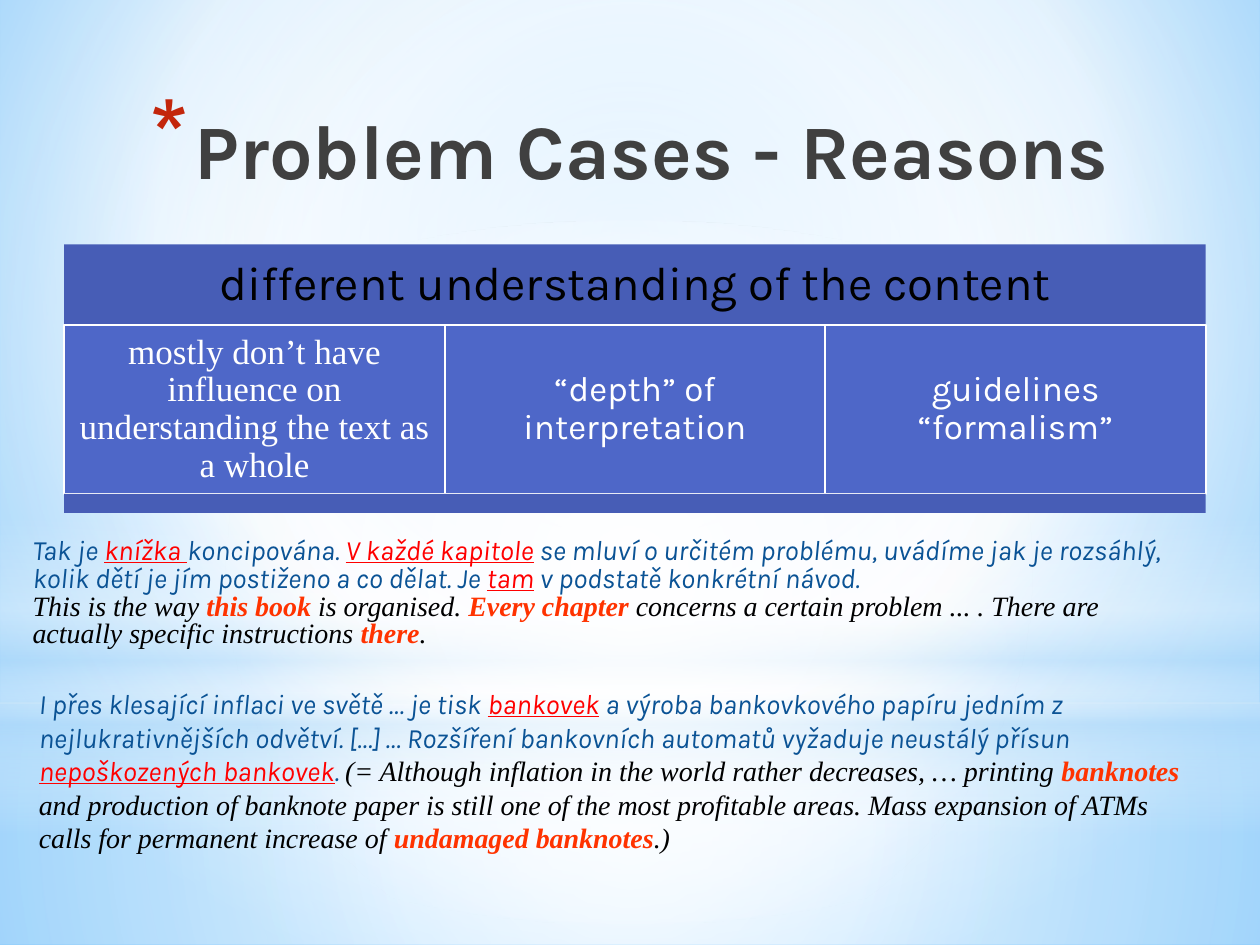
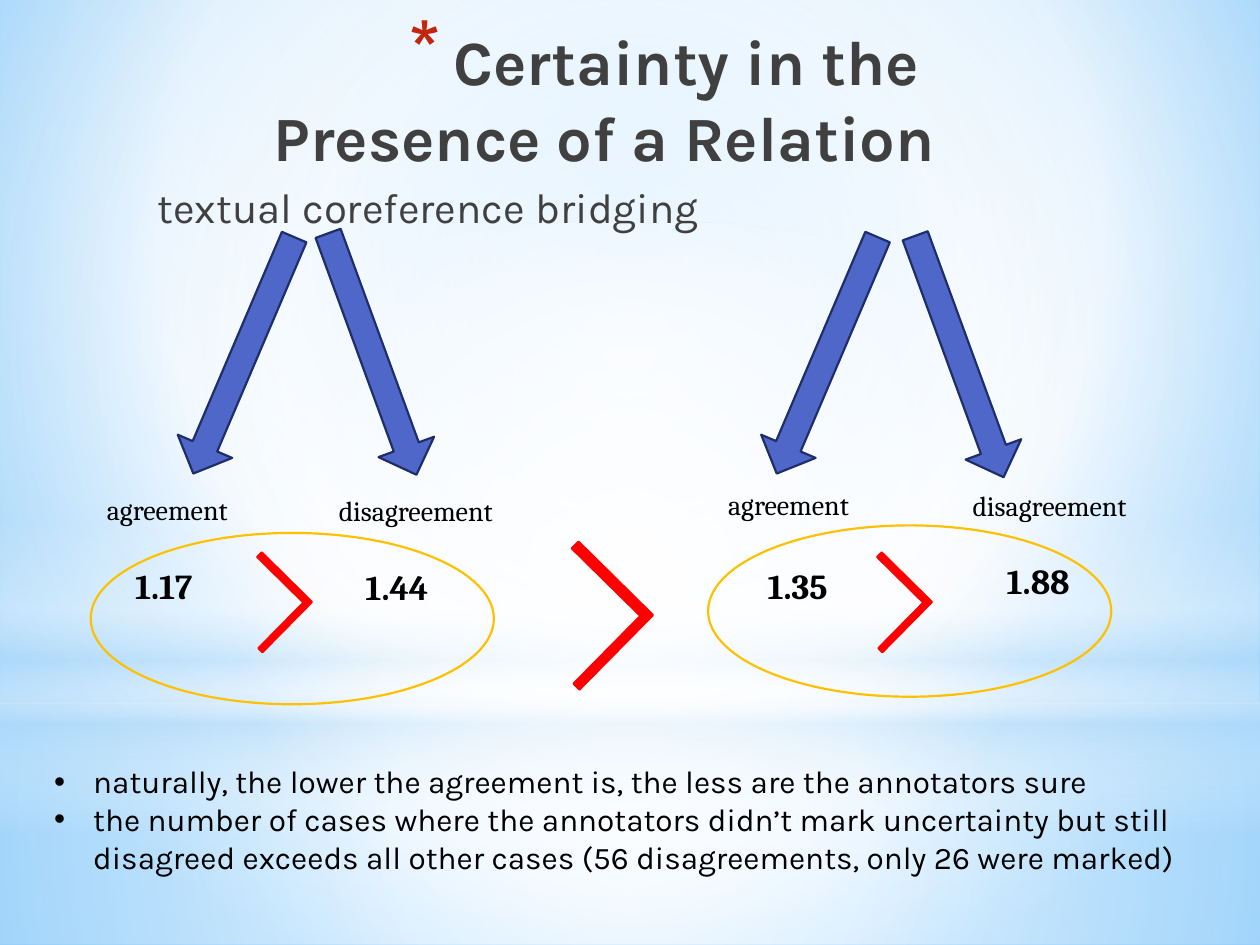
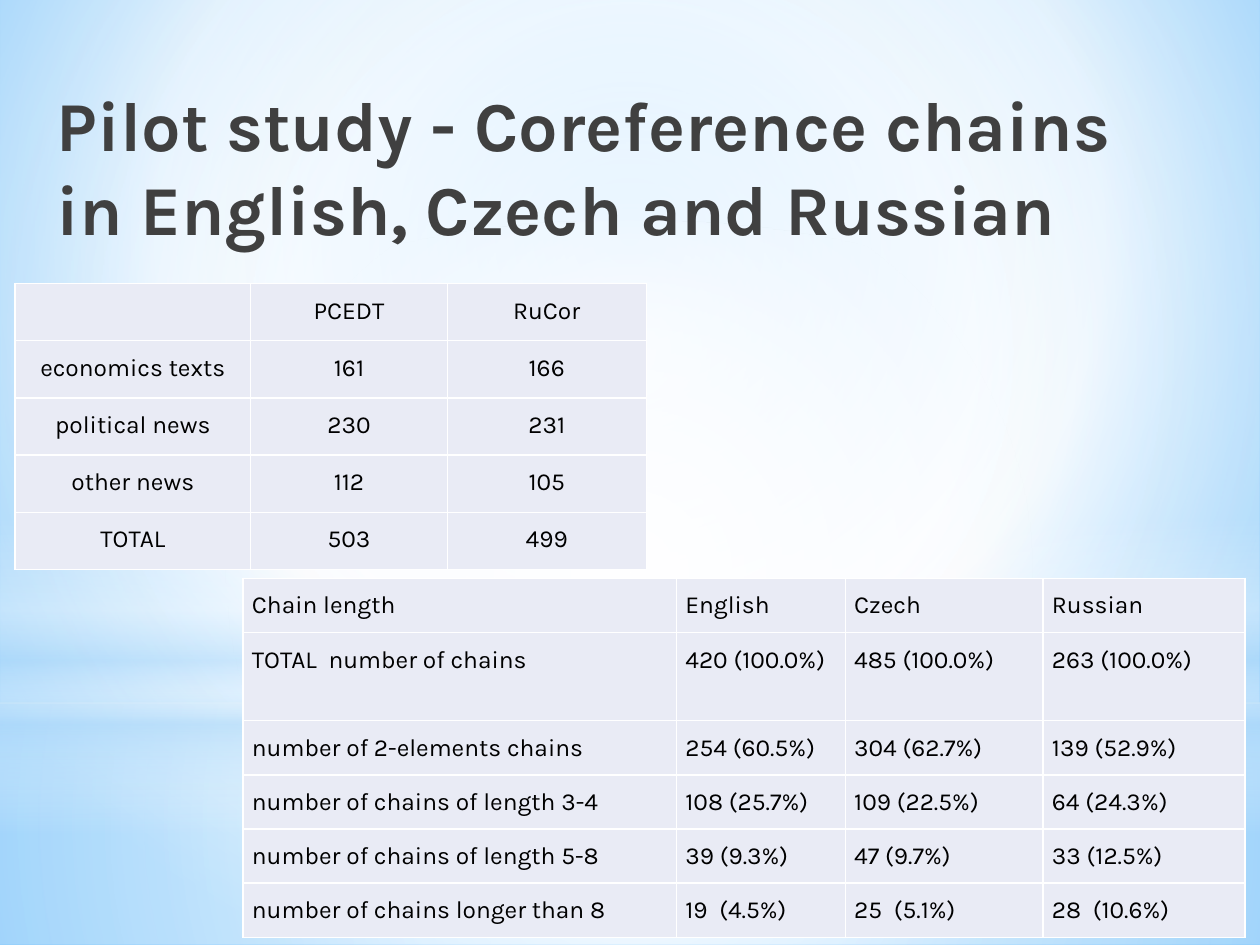
from lxml.etree import SubElement
from pptx import Presentation
from pptx.dml.color import RGBColor
from pptx.enum.shapes import MSO_SHAPE
from pptx.enum.text import MSO_ANCHOR, MSO_AUTO_SIZE, PP_ALIGN
from pptx.oxml.ns import qn
from pptx.util import Inches, Pt

CELL = Inches(1)
COLS, ROWS = 10, 7.5
COLORS = {
    "sky": "9ED5FF", "deep sky": "5BB9FF", "mist": "B4DCFA", "white": "FFFFFF",
    "black": "000000", "title": "404040", "star": "C3260C", "czech": "0B5395",
    "red": "FF0000", "orange": "FF3300", "band": "475DB6", "blue": "4E67C8",
    "navy": "1F2E69", "gold": "FFC000", "cell": "E9EBF5",
}
KARLA, TIMES, CAMBRIA = "Karla", "Times New Roman", "Cambria"
STYLES = {
    "title": dict(name=KARLA, bold=True, color="title"),
    "heading": dict(name=KARLA, size=Pt(24), color="title"),
    "list": dict(name=KARLA, size=Pt(18), color="black"),
    "cell": dict(name=KARLA, size=Pt(14), color="black"),
    "banner": dict(name=KARLA, size=Pt(27), color="black"),
    "reason": dict(name=KARLA, size=Pt(20), color="white"),
    "reason serif": dict(name=TIMES, size=Pt(20), color="white"),
    "cs": dict(name=KARLA, size=Pt(16), italic=True, color="czech"),
    "cs mark": dict(name=KARLA, size=Pt(16), italic=True, underline=True, color="red"),
    "en": dict(name=TIMES, size=Pt(16), italic=True, color="black"),
    "en mark": dict(name=TIMES, size=Pt(16), italic=True, bold=True, color="orange"),
    "label": dict(name=CAMBRIA, size=Pt(16), color="black"),
    "value": dict(name=CAMBRIA, size=Pt(20), bold=True, color="black"),
}
BOOK = [
    [("Tak je ", "cs"), ("knížka ", "cs mark"), ("koncipována. ", "cs"),
     ("V každé kapitole", "cs mark"),
     (" se mluví o určitém problému, uvádíme jak je rozsáhlý, kolik dětí je jím "
      "postiženo a co dělat. Je ", "cs"),
     ("tam", "cs mark"), (" v podstatě konkrétní návod.", "cs")],
    [("This is the way ", "en"), ("this book ", "en mark"), ("is organised. ", "en"),
     ("Every chapter ", "en mark"),
     ("concerns a certain problem ... . There are actually specific instructions ", "en"),
     ("there", "en mark"), (".", "en")],
]
BANKNOTES = [
    [("I přes klesající inflaci ve světě … je tisk ", "cs"), ("bankovek", "cs mark"),
     (" a výroba bankovkového papíru jedním z nejlukrativnějších odvětví. […] … "
      "Rozšíření bankovních automatů vyžaduje neustálý přísun ", "cs"),
     ("nepoškozených bankovek", "cs mark"), (". ", "cs"),
     ("(= Although inflation in the world rather decreases, … printing ", "en"),
     ("banknotes", "en mark"),
     (" and production of banknote paper is still one of the most profitable areas. "
      "Mass expansion of ATMs calls for permanent increase of ", "en"),
     ("undamaged banknotes", "en mark"), (".)", "en")],
]
CERTAINTY = [
    "naturally, the lower the agreement is, the less are the annotators sure",
    "the number of cases where the annotators didn’t mark uncertainty but still "
    "disagreed exceeds all other cases (56 disagreements, only 26 were marked)",
]
TEXT_COUNTS = [
    ["", "PCEDT", "RuCor"],
    ["economics texts", "161", "166"],
    ["political news", "230", "231"],
    ["other news", "112", "105"],
    ["TOTAL", "503", "499"],
]
CHAIN_COUNTS = [
    ["Chain length", "English", "Czech", "Russian"],
    ["TOTAL  number of chains", "420 (100.0%)", "485 (100.0%)", "263 (100.0%)"],
    ["number of 2-elements chains", "254 (60.5%)", "304 (62.7%)", "139 (52.9%)"],
    ["number of chains of length 3-4", "108 (25.7%)", "109 (22.5%)", "64 (24.3%)"],
    ["number of chains of length 5-8", "39 (9.3%)", "47 (9.7%)", "33 (12.5%)"],
    ["number of chains longer than 8", "19  (4.5%)", "25  (5.1%)", "28  (10.6%)"],
]


def rgb(name):
    """Return the named colour."""
    return RGBColor.from_string(COLORS[name])


def grid(*cells):
    """Turn grid columns and rows into lengths."""
    return [int(c * CELL) for c in cells]


def set_attrs(target, values):
    """Set every attribute in a dict of format values."""
    for key, value in values.items():
        setattr(target, key, value)


def node(parent, tag, **attrs):
    """Append one XML element and return it."""
    return SubElement(parent, qn(tag), {k: str(v) for k, v in attrs.items()})


def set_gradient(props, stops, focus=None):
    """Swap a solid fill for a radial gradient, or a vertical one without focus."""
    solid = props.find(qn("a:solidFill"))
    grad = node(props, "a:gradFill", rotWithShape=1)
    props.replace(solid, grad)
    stop_list = node(grad, "a:gsLst")
    for pos, color, opacity in stops:
        stop = node(stop_list, "a:gs", pos=pos * 1000)
        clr = node(stop, "a:srgbClr", val=COLORS[color])
        if opacity < 100:
            node(clr, "a:alpha", val=opacity * 1000)
    if focus:
        sides = {k: v * 1000 for k, v in zip("ltrb", focus)}
        node(node(grad, "a:path", path="circle"), "a:fillToRect", **sides)
    else:
        node(grad, "a:lin", ang=5400000, scaled=0)


def add_figure(s, kind, place, fill=None, line=None, rot=0, adj=()):
    """Add a preset shape with plain fill and outline."""
    sp = s.shapes.add_shape(kind, *grid(*place))
    sp.shadow.inherit = False
    sp.rotation = rot
    for i, value in enumerate(adj):
        sp.adjustments[i] = value
    for paint, color in ((sp.fill, fill), (sp.line.fill, line)):
        if color:
            paint.solid()
            paint.fore_color.rgb = rgb(color)
        else:
            paint.background()
    if line:
        sp.line.width = Pt(1.25)
    return sp


def write(p, runs, **fmt):
    """Fill a paragraph with styled runs."""
    set_attrs(p, fmt)
    for text, style in runs:
        font = dict(STYLES[style])
        color = font.pop("color")
        for i, part in enumerate(text.split("\n")):
            if i:
                p.add_line_break()
            r = p.add_run()
            r.text = part
            set_attrs(r.font, font)
            r.font.color.rgb = rgb(color)


def set_bullet(p, char, indent, color=None, percent=100):
    """Give a paragraph a hanging bullet."""
    props = p._p.get_or_add_pPr()
    props.set("marL", str(Inches(indent)))
    props.set("indent", str(-Inches(indent)))
    if color:
        node(node(props, "a:buClr"), "a:srgbClr", val=COLORS[color])
    node(props, "a:buSzPct", val=percent * 1000)
    node(props, "a:buChar", char=char)


def fill_frame(tf, paragraphs, **fmt):
    """Write several paragraphs into a frame."""
    set_attrs(tf, dict(word_wrap=True, auto_size=MSO_AUTO_SIZE.NONE))
    for i, runs in enumerate(paragraphs):
        write(tf.add_paragraph() if i else tf.paragraphs[0], runs, **fmt)


def place_holder(sp, place):
    """Move a placeholder onto the grid and return its frame."""
    set_attrs(sp, dict(zip(("left", "top", "width", "height"), grid(*place))))
    sp.text_frame.vertical_anchor = MSO_ANCHOR.TOP
    return sp.text_frame


def add_title(s, place, text, size, align, star=True):
    """Set the slide title, with a red star before it if asked."""
    tf = place_holder(s.shapes.title, place)
    fill_frame(tf, [[(text, "title")]], alignment=align)
    for r in tf.paragraphs[0].runs:
        r.font.size = Pt(size)
    if star:
        set_bullet(tf.paragraphs[0], "*", 0.35, "star", 128)


def add_text(s, place, paragraphs, **fmt):
    """Add a wrapped text box."""
    fill_frame(s.shapes.add_textbox(*grid(*place)).text_frame, paragraphs, **fmt)


def add_panel(s, place, text, style, inset, fill, line=None):
    """Add a rectangle with centred text."""
    tf = add_figure(s, MSO_SHAPE.RECTANGLE, place, fill, line).text_frame
    sides = ("left", "top", "right", "bottom")
    set_attrs(tf, {f"margin_{side}": Inches(inset) for side in sides})
    tf.vertical_anchor = MSO_ANCHOR.MIDDLE
    fill_frame(tf, [[(text, style)]], alignment=PP_ALIGN.CENTER, line_spacing=0.9)


def add_grid_table(s, left, top, widths, heights, rows, align):
    """Add a table with pale cells and white borders."""
    place = grid(left, top, sum(widths), sum(heights))
    table = s.shapes.add_table(len(rows), len(widths), *place).table
    set_attrs(table, dict(first_row=False, horz_banding=False))
    for col, width in zip(table.columns, widths):
        col.width = Inches(width)
    for row, height, texts in zip(table.rows, heights, rows):
        row.height = Inches(height)
        for cell, text in zip(row.cells, texts):
            sides = ("left", "top", "right", "bottom")
            set_attrs(cell, {f"margin_{side}": Inches(0.07) for side in sides})
            write(cell.text_frame.paragraphs[0], [(text, "cell")],
                  alignment=align, line_spacing=1.15)
            props = cell._tc.get_or_add_tcPr()
            for side in "LRTB":
                ln = node(props, f"a:ln{side}", w=Pt(1))
                node(node(ln, "a:solidFill"), "a:srgbClr", val=COLORS["white"])
            cell.fill.solid()
            cell.fill.fore_color.rgb = rgb("cell")


def style_master(prs, s):
    """Put the background, glows and title style on the master."""
    master = prs.slide_master
    master.background.fill.solid()
    set_gradient(master.element.xpath(".//p:bgPr")[0],
                 [(0, "sky", 100), (60, "white", 100), (100, "deep sky", 100)],
                 (20, 10, 20, 60))
    for props in master.element.xpath(".//p:titleStyle/a:lvl1pPr/a:defRPr"):
        props.set("sz", "3600")
    middle = (50, 50, 50, 50)
    horizon = 5.58
    glows = [
        (MSO_SHAPE.RECTANGLE, (0, horizon, COLS, ROWS - horizon),
         [(0, "white", 91), (37, "white", 76), (100, "mist", 79)], middle),
        (MSO_SHAPE.RECTANGLE, (0, 0, COLS, horizon),
         [(0, "white", 89), (48, "white", 62), (100, "mist", 79)], middle),
        (MSO_SHAPE.RECTANGLE, (0, 4.12, COLS, ROWS / 3),
         [(0, "white", 0), (29, "white", 30), (45, "mist", 40),
          (55, "white", 26), (65, "mist", 60), (100, "white", 0)], None),
        (MSO_SHAPE.OVAL, (0, 1.75, COLS, horizon),
         [(0, "white", 100), (56, "white", 0)], middle),
    ]
    for i, (kind, place, stops, focus) in enumerate(glows):
        sp = add_figure(s, kind, place, "white")
        set_gradient(sp.element.spPr, stops, focus)
        master.shapes.element.insert(2 + i, sp.element)


def build_reasons(s):
    """Build the slide on problem cases."""
    add_title(s, (0.12, 0.76, 9.76, 0.71), "Problem Cases - Reasons", 44, PP_ALIGN.CENTER)
    add_text(s, (0.16, 4.22, 9.41, 0.99), BOOK, line_spacing=0.83)
    left, width = 0.51, 9.06
    add_panel(s, (left, 1.94, width, 0.64), "different understanding of the content",
              "banner", 0.11, "band")
    reasons = [
        ("mostly don’t have influence on understanding the text as a whole", "reason serif"),
        ("“depth” of interpretation", "reason"),
        ("guidelines “formalism”", "reason"),
    ]
    step = width / len(reasons)
    for i, (text, style) in enumerate(reasons):
        add_panel(s, (left + i * step, 2.58, step, 1.34), text, style, 0.08, "blue", "white")
    add_figure(s, MSO_SHAPE.RECTANGLE, (left, 3.92, width, 0.15), "band")
    add_text(s, (0.21, 5.4, 9.44, 1.45), BANKNOTES)


def build_certainty(s):
    """Build the slide that compares certainty for two relations."""
    add_title(s, (0.4, 0.13, 7.12, 1.25), "Certainty in the \nPresence of a Relation",
              36, PP_ALIGN.RIGHT)
    heads, notes = list(s.placeholders)[1:]
    tf = place_holder(heads, (0.75, 1.39, 8.5, 4.25))
    tf.margin_left = Inches(0.5)
    fill_frame(tf, [[("textual coreference\tbridging", "heading")]],
               alignment=PP_ALIGN.LEFT, space_before=Pt(0))
    props = tf.paragraphs[0]._p.get_or_add_pPr()
    for key in ("marL", "indent"):
        props.set(key, "0")
    node(props, "a:buNone")
    node(node(props, "a:tabLst"), "a:tab", pos=Inches(5.32), algn="l")

    tf = place_holder(notes, (0.33, 6, 9.33, 1.01))
    fill_frame(tf, [[(text, "list")] for text in CERTAINTY], space_before=Pt(0))
    for p in tf.paragraphs:
        set_bullet(p, "•", 0.31)

    arrows = [(1.7, 1.8, 23.1), (6.33, 1.8, 23.1), (2.72, 1.79, 339.9), (7.38, 1.81, 339.9)]
    for x, y, rot in arrows:
        add_figure(s, MSO_SHAPE.DOWN_ARROW, (x, y, 0.47, 2.04), "blue", "navy", rot,
                   (0.45, 0.5))
    labels = [("agreement", 0.75, 3.86), ("disagreement", 2.59, 3.87),
              ("agreement", 5.68, 3.82), ("disagreement", 7.62, 3.83)]
    for text, x, y in labels:
        add_text(s, (x, y, 1.75, 0.37), [[(text, "label")]])
    values = [("1.17", 0.54, 4.43), ("1.44", 2.39, 4.44),
              ("1.35", 5.57, 4.43), ("1.88", 7.48, 4.39)]
    for text, x, y in values:
        add_text(s, (x, y, 1.52, 0.44), [[(text, "value")]], alignment=PP_ALIGN.CENTER)
    for x, y, size in [(1.8, 4.5, 0.56), (6.72, 4.5, 0.56), (4.18, 4.47, 0.83)]:
        add_figure(s, MSO_SHAPE.CORNER, (x, y, size, size), "red", "red", 224.6,
                   (0.09, 0.08))
    for x, y in [(0.72, 4.23), (5.62, 4.17)]:
        add_figure(s, MSO_SHAPE.OVAL, (x, y, 3.2, 1.36), line="gold")


def build_pilot(s):
    """Build the slide with the two tables of the pilot study."""
    add_title(s, (0.35, 0.6, 9.13, 1.25),
              "Pilot study - Coreference chains in English, Czech and Russian",
              40, PP_ALIGN.LEFT, star=False)
    add_grid_table(s, 0.12, 2.25, [1.87, 1.56, 1.58], [2.27 / 5] * 5, TEXT_COUNTS,
                   PP_ALIGN.CENTER)
    add_grid_table(s, 1.93, 4.59, [3.44, 1.34, 1.57, 1.6], [0.43, 0.7] + [0.43] * 4,
                   CHAIN_COUNTS, PP_ALIGN.LEFT)


def main():
    """Build and save the presentation."""
    prs = Presentation()
    prs.slide_width, prs.slide_height = grid(COLS, ROWS)
    title_only, two_content = prs.slide_layouts[5], prs.slide_layouts[3]
    pages = [(title_only, build_reasons), (two_content, build_certainty),
             (title_only, build_pilot)]
    for i, (layout, build) in enumerate(pages):
        s = prs.slides.add_slide(layout)
        if i == 0:
            style_master(prs, s)
        build(s)
    prs.save("out.pptx")


if __name__ == "__main__":
    main()
